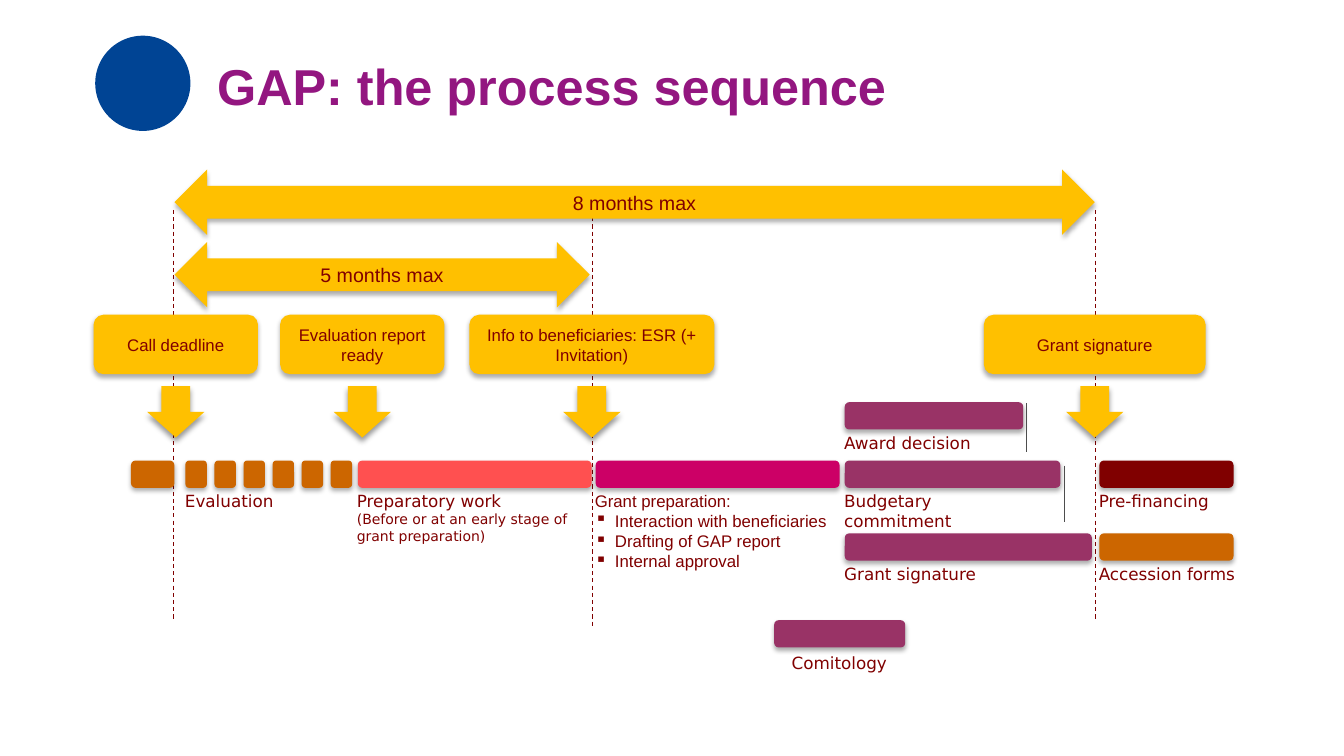
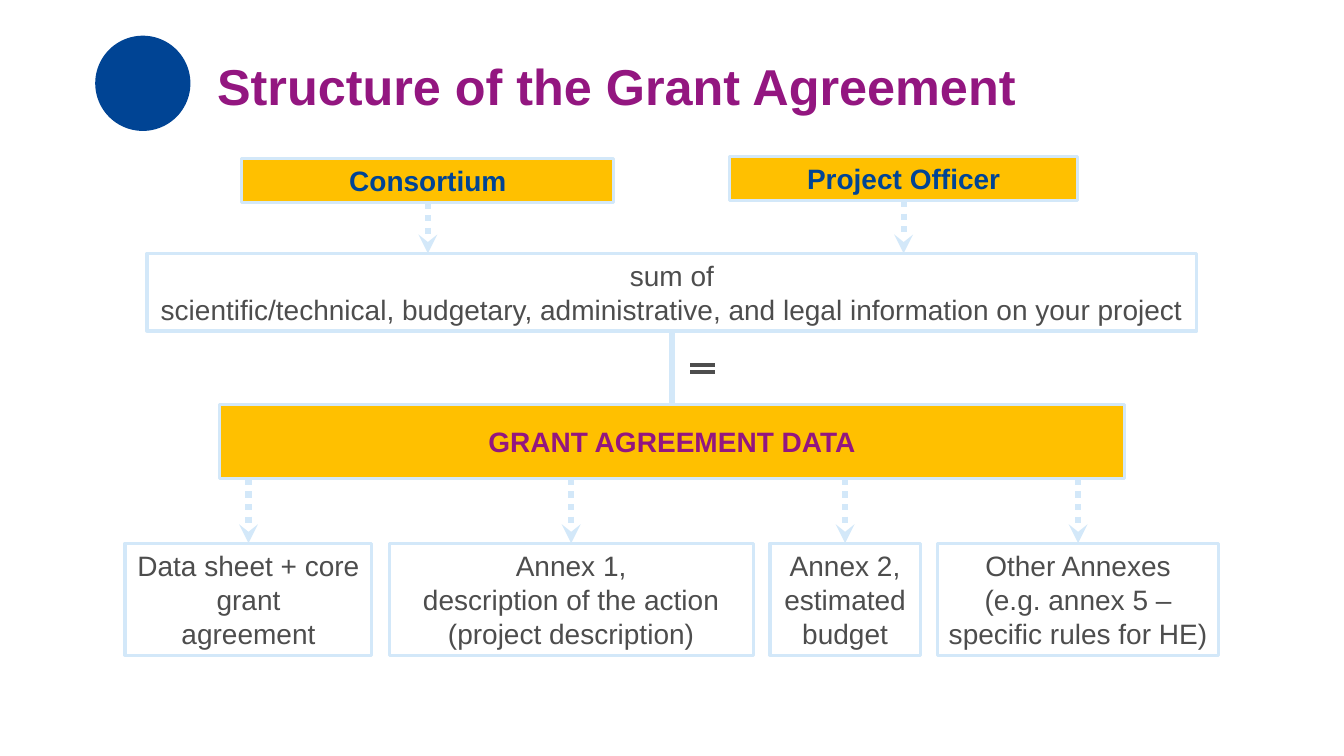
from lxml import etree
from pptx import Presentation
from pptx.dml.color import RGBColor
from pptx.enum.dml import MSO_LINE
from pptx.enum.shapes import MSO_CONNECTOR, MSO_SHAPE
from pptx.enum.text import MSO_ANCHOR, PP_ALIGN
from pptx.oxml.ns import qn
from pptx.util import Pt

COLORS = {
    "purple": "931680", "blue": "004494", "gold": "FFC000", "maroon": "800000",
    "orange": "CC6600", "coral": "FF5050", "magenta": "CC0066", "plum": "993366",
    "grey": "4D4D4D", "pale": "D3E8F9",
}
SOFT_SHADOW = (32, 3.5, 2.2)
DEEP_SHADOW = (40, 4, 3)


def add_box(slide, kind, left, top, width, height, lines=(), fill=None, border=None,
            shadow=None, color="maroon", size=12, font="Arial", bold=False,
            align=PP_ALIGN.CENTER, anchor=MSO_ANCHOR.MIDDLE, wrap=True):
    frame = Pt(left), Pt(top), Pt(width), Pt(height)
    if kind is None:
        shape = slide.shapes.add_textbox(*frame)
    else:
        shape = slide.shapes.add_shape(kind, *frame)
        shape.shadow.inherit = False
        if fill:
            shape.fill.solid()
            shape.fill.fore_color.rgb = RGBColor.from_string(COLORS[fill])
        else:
            shape.fill.background()
        if border:
            shape.line.color.rgb = RGBColor.from_string(COLORS[border])
            shape.line.width = Pt(2.25)
        else:
            shape.line.fill.background()
    if shadow:
        opacity, blur, distance = shadow
        effects = shape._element.spPr.find(qn("a:effectLst"))
        outer = etree.SubElement(effects, qn("a:outerShdw"), blurRad=str(Pt(blur)),
                                 dist=str(Pt(distance)), dir="5400000", rotWithShape="0")
        black = etree.SubElement(outer, qn("a:srgbClr"), val="000000")
        etree.SubElement(black, qn("a:alpha"), val=str(opacity * 1000))
    if lines:
        text_frame = shape.text_frame
        text_frame.word_wrap = wrap
        text_frame.vertical_anchor = anchor
        text_frame.text = "\n".join(lines)
        for paragraph in text_frame.paragraphs:
            paragraph.alignment = align
            paragraph.font.name = font
            paragraph.font.size = Pt(size)
            paragraph.font.bold = bold
            paragraph.font.color.rgb = RGBColor.from_string(COLORS[color])
    return shape


def add_line(slide, x1, y1, x2, y2, color, width, dash=None, arrow=False):
    connector = slide.shapes.add_connector(MSO_CONNECTOR.STRAIGHT, Pt(x1), Pt(y1), Pt(x2), Pt(y2))
    connector.line.color.rgb = RGBColor.from_string(COLORS[color])
    connector.line.width = Pt(width)
    if dash:
        connector.line.dash_style = dash
    properties = connector._element.spPr
    if arrow:
        etree.SubElement(properties.find(qn("a:ln")), qn("a:tailEnd"), type="stealth")
    etree.SubElement(properties, qn("a:effectLst"))
    return connector


presentation = Presentation()
presentation.slide_width = Pt(960)
presentation.slide_height = Pt(540)

slides = []
for title in ("GAP: the process sequence", "Structure of the Grant Agreement"):
    slide = presentation.slides.add_slide(presentation.slide_layouts[6])
    title_box = add_box(slide, None, 148, 36, 760, 46.5, [title], color="purple", size=36,
                        bold=True, align=PP_ALIGN.LEFT, anchor=MSO_ANCHOR.BOTTOM)
    title_box.text_frame.margin_bottom = 0
    add_box(slide, MSO_SHAPE.OVAL, 68, 25.5, 68, 68, fill="blue")
    slides.append(slide)
process, structure = slides

for x, bottom in ((124, 443), (423.4, 447), (782.2, 443)):
    add_line(process, x, 150, x, bottom, "maroon", 0.75, MSO_LINE.DASH)

BAR_HEIGHT = 19.5
UPPER, MAIN, LOWER, LAST = 287.3, 329, 381, 443
for block in range(6):
    add_box(process, MSO_SHAPE.ROUNDED_RECTANGLE, 132.5 + 20.75 * block, MAIN, 15.3, BAR_HEIGHT,
            fill="orange", shadow=SOFT_SHADOW)

bars = [
    (93.6, MAIN, 31, "orange"),
    (255.6, MAIN, 167, "coral"),
    (425.5, MAIN, 174.2, "magenta"),
    (603.4, UPPER, 127.5, "plum"),
    (603.4, MAIN, 154, "plum"),
    (603.4, LOWER, 176.5, "plum"),
    (785.3, MAIN, 95.8, "maroon"),
    (785.3, LOWER, 95.8, "orange"),
    (553, LAST, 93.6, "plum"),
]
for left, top, width, fill in bars:
    add_box(process, MSO_SHAPE.ROUNDED_RECTANGLE, left, top, width, BAR_HEIGHT,
            fill=fill, shadow=SOFT_SHADOW)

captions = [
    (132.5, MAIN, 123, "Evaluation"),
    (603.4, UPPER, 143, "Award decision"),
    (603.4, MAIN, 150.5, "Budgetary commitment"),
    (603.4, LOWER, 150.5, "Grant signature"),
    (785.3, MAIN, 127.5, "Pre-financing"),
    (785.3, LOWER, 127.5, "Accession forms"),
]
for left, top, width, caption in captions:
    add_box(process, None, left - 7.5, top + 18, width, 21, [caption], font="DejaVu Sans",
            align=PP_ALIGN.LEFT, anchor=MSO_ANCHOR.TOP)
add_box(process, None, 540, LAST + 19.5, 119, 21, ["Comitology"], font="DejaVu Sans",
        anchor=MSO_ANCHOR.TOP)

preparatory = add_box(process, None, 247.8, MAIN + 18, 173, 57,
                      ["Preparatory work", "(Before or at an early stage of grant preparation)"],
                      font="DejaVu Sans", align=PP_ALIGN.LEFT, anchor=MSO_ANCHOR.TOP)
preparatory.text_frame.paragraphs[1].font.size = Pt(10)

preparation = add_box(process, None, 417.8, MAIN + 18, 189, 92,
                      ["Grant preparation:", "Interaction with beneficiaries",
                       "Drafting of GAP report", "Internal approval"],
                      align=PP_ALIGN.LEFT, anchor=MSO_ANCHOR.TOP)
for paragraph in preparation.text_frame.paragraphs[1:]:
    properties = paragraph._p.get_or_add_pPr()
    properties.set("marL", str(Pt(14.4)))
    properties.set("indent", str(Pt(-14.4)))
    bullet = etree.Element(qn("a:buChar"), char="▪")
    properties.insert(0, bullet)

add_line(process, 733, 288, 733, 322.6, "grey", 0.5)
add_line(process, 760.3, 332.6, 760.3, 373, "grey", 0.5)

for top, width, duration in ((172.8, 296.6, "5 months max"), (121, 657.4, "8 months max")):
    add_box(process, MSO_SHAPE.LEFT_RIGHT_ARROW, 124.6, top, width, 46.8, [duration],
            fill="gold", shadow=SOFT_SHADOW, size=14)

milestones = [
    (125.6, 117.4, "Call deadline"),
    (258.8, 117.4, "Evaluation report ready"),
    (422.8, 175, "Info to beneficiaries: ESR (+ Invitation)"),
    (782, 158.4, "Grant signature"),
]
for center, width, milestone in milestones:
    add_box(process, MSO_SHAPE.ROUNDED_RECTANGLE, center - width / 2, 224.8, width, 42.5,
            [milestone], fill="gold", shadow=SOFT_SHADOW)
    add_box(process, MSO_SHAPE.DOWN_ARROW, center - 20.5, 275.8, 41, 36.7,
            fill="gold", shadow=DEEP_SHADOW)

information = add_box(
    structure, MSO_SHAPE.RECTANGLE, 105, 181, 750, 55.5,
    ["sum of", "scientific/technical, budgetary, administrative, and legal information on your project"],
    border="pale", color="grey", size=20, wrap=False)
agreement = add_box(structure, MSO_SHAPE.RECTANGLE, 157, 289, 646, 53, ["GRANT AGREEMENT DATA"],
                    fill="gold", border="pale", color="purple", size=20, bold=True)
link = add_line(structure, 480, 236.5, 480, 289, "pale", 4.5)
link.begin_connect(information, 2)
link.end_connect(agreement, 0)
for y in (260.6, 265.7):
    add_line(structure, 493.2, y, 510.5, y, "grey", 3)

for left, top, width, party in ((172.8, 113, 265.7, "Consortium"),
                                (521.3, 111.8, 248.4, "Project Officer")):
    box = add_box(structure, MSO_SHAPE.RECTANGLE, left, top, width, 31.7, [party],
                  fill="gold", border="pale", color="blue", size=20, bold=True)
    center = left + width / 2
    arrow = add_line(structure, center, top + 31.7, center, 181, "pale", 4.5,
                     MSO_LINE.ROUND_DOT, arrow=True)
    arrow.begin_connect(box, 2)

documents = [
    (89.3, 176.4, ["Data sheet + core", "grant", "agreement"]),
    (278, 260, ["Annex 1,", "description of the action", "(project description)"]),
    (550, 107.3, ["Annex 2,", "estimated", "budget"]),
    (669.6, 201, ["Other Annexes", "(e.g. annex 5 –", "specific rules for HE)"]),
]
for left, width, lines in documents:
    box = add_box(structure, MSO_SHAPE.RECTANGLE, left, 388, width, 80, lines,
                  border="pale", color="grey", size=20, wrap=False)
    center = left + width / 2
    arrow = add_line(structure, center, 342, center, 388, "pale", 4.5,
                     MSO_LINE.ROUND_DOT, arrow=True)
    arrow.end_connect(box, 0)

presentation.save("out.pptx")
